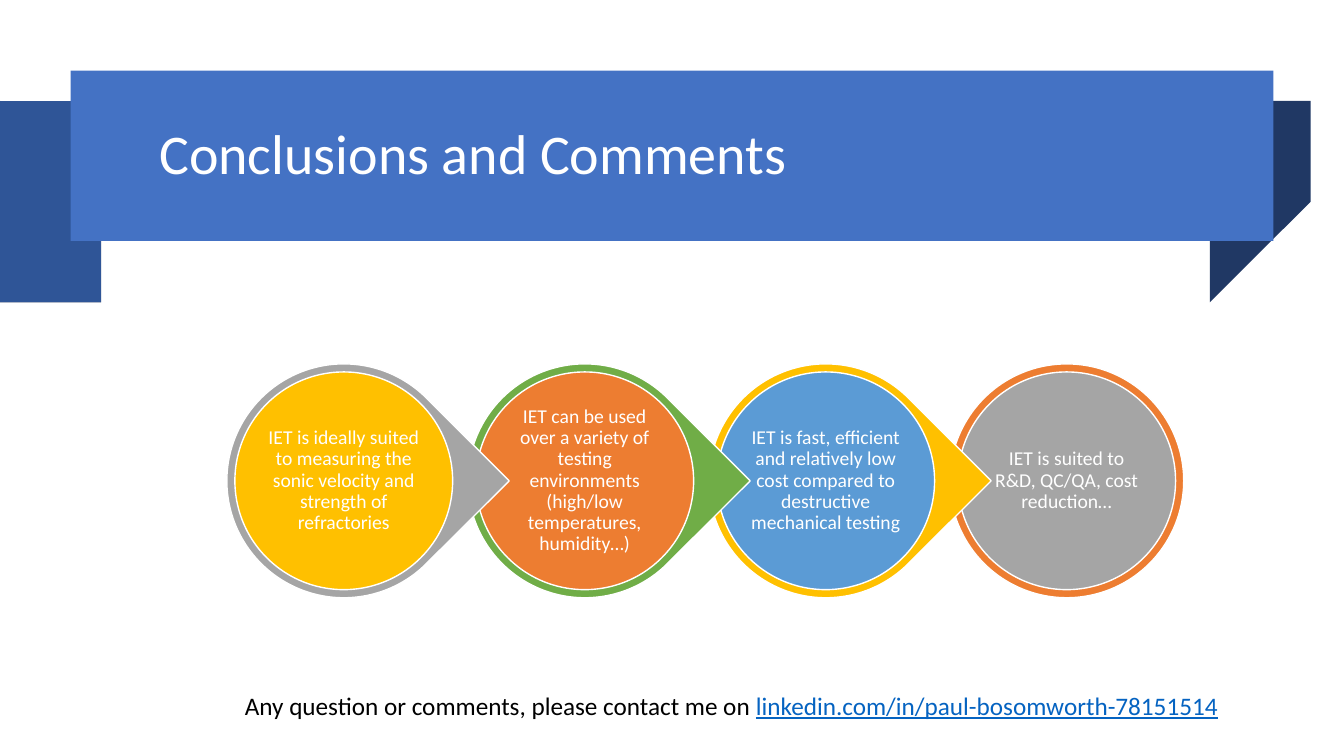
from pptx import Presentation
from pptx.dml.color import RGBColor
from pptx.enum.shapes import MSO_SHAPE as Shape
from pptx.enum.text import MSO_ANCHOR as Anchor, MSO_AUTO_SIZE as Fit, PP_ALIGN as Align
from pptx.util import Inches, Pt

HUES = {
    "white": "FFFFFF", "black": "000000", "blue": "4472C4", "mid": "2F5597",
    "navy": "203864", "orange": "ED7D31", "gray": "A5A5A5", "gold": "FFC000",
    "sky": "5B9BD5", "green": "70AD47", "link": "0563C1",
}
TITLE = "Conclusions and Comments"
NOTE = [
    ("Any question or comments, please contact me on ", "black"),
    ("linkedin.com/in/paul-bosomworth-78151514", "link"),
]
STEPS = [
    ("IET is ideally suited to measuring the sonic velocity and strength of refractories",
     "gray", "gold"),
    ("IET can be used over a variety of testing environments (high/low temperatures, humidity…)",
     "green", "orange"),
    ("IET is fast, efficient and relatively low cost compared to destructive mechanical testing",
     "gold", "sky"),
    ("IET is suited to R&D, QC/QA, cost reduction…", "orange", "gray"),
]
FOLDS = [
    ("navy", [(12.63, 2.38), (12.27, 2.6), (12.27, 0.91), (12.63, 0.7)]),
    ("navy", [(1.22, 3.41), (0.45, 2.78), (0.45, 1.12), (1.22, 1.75)]),
    ("mid", [(0.89, 2.58), (0.45, 2.78), (0.45, 1.12), (0.89, 0.92)]),
    ("navy", [(0.89, 2.57), (0.71, 2.39), (0.71, 0.7), (0.89, 0.89)]),
]
FIRST, STEP, MID = 3.41, 2.39, 4.77
RING, DISC, TEXT = 2.32, 2.16, 1.54


def color(name):
    return RGBColor.from_string(HUES[name])


def paint(shape, fill, line=None):
    shape.shadow.inherit = False
    shape.fill.solid()
    shape.fill.fore_color.rgb = color(fill)
    if line:
        shape.line.color.rgb = color(line)
        shape.line.width = Pt(1)
    else:
        shape.line.fill.background()


def style(para, size, hue=None):
    para.font.name = "Calibri"
    para.font.size = Pt(size)
    if hue:
        para.font.color.rgb = color(hue)


def square(x, size):
    return [Inches(v) for v in (x - size / 2, MID - size / 2, size, size)]


def add_banner(slide):
    for hue, points in FOLDS:
        build = slide.shapes.build_freeform(*points[0], scale=Inches(1))
        build.add_line_segments(points[1:], close=True)
        paint(build.convert_to_shape(), hue)
    band = slide.shapes.add_shape(
        Shape.RECTANGLE, Inches(0.7), Inches(0.7), Inches(11.93), Inches(1.69))
    paint(band, "blue")


def add_title(slide):
    title = slide.shapes.title
    slide.shapes._spTree.append(title._element)
    title.left, title.top = Inches(1.48), Inches(0.83)
    title.width, title.height = Inches(10.94), Inches(1.45)
    frame = title.text_frame
    frame.text = TITLE
    frame.auto_size = Fit.NONE
    frame.vertical_anchor = Anchor.MIDDLE
    para = frame.paragraphs[0]
    para.alignment = Align.LEFT
    para.line_spacing = 0.9
    style(para, 40, "white")


def add_note(slide):
    box = slide.shapes.add_textbox(Inches(2.33), Inches(6.8), Inches(10.58), Inches(0.4))
    frame = box.text_frame
    frame.word_wrap = True
    frame.auto_size = Fit.SHAPE_TO_FIT_TEXT
    para = frame.paragraphs[0]
    style(para, 18)
    for words, hue in NOTE:
        run = para.add_run()
        run.text = words
        run.font.color.rgb = color(hue)
        run.font.underline = True if hue == "link" else None


def add_step(slide, index):
    words, edge, fill = STEPS[index]
    x = FIRST + STEP * index
    last = index == len(STEPS) - 1
    ring = slide.shapes.add_shape(Shape.OVAL if last else Shape.TEAR, *square(x, RING))
    if not last:
        ring.rotation = 45
        ring.adjustments[0] = 1
    paint(ring, edge, "white")
    disc = slide.shapes.add_shape(Shape.OVAL, *square(x, DISC))
    paint(disc, fill, "white")
    frame = slide.shapes.add_textbox(*square(x, TEXT)).text_frame
    frame.word_wrap = True
    frame.vertical_anchor = Anchor.MIDDLE
    frame.margin_left = frame.margin_right = Inches(0.02)
    frame.margin_top = frame.margin_bottom = Inches(0.02)
    frame.text = words
    para = frame.paragraphs[0]
    para.alignment = Align.CENTER
    para.line_spacing = 0.9
    style(para, 14, "white")


def main():
    deck = Presentation()
    deck.slide_width, deck.slide_height = Inches(13.33), Inches(7.5)
    slide = deck.slides.add_slide(deck.slide_layouts[5])
    add_banner(slide)
    add_title(slide)
    add_note(slide)
    for index in reversed(range(len(STEPS))):
        add_step(slide, index)
    deck.save("out.pptx")


if __name__ == "__main__":
    main()
